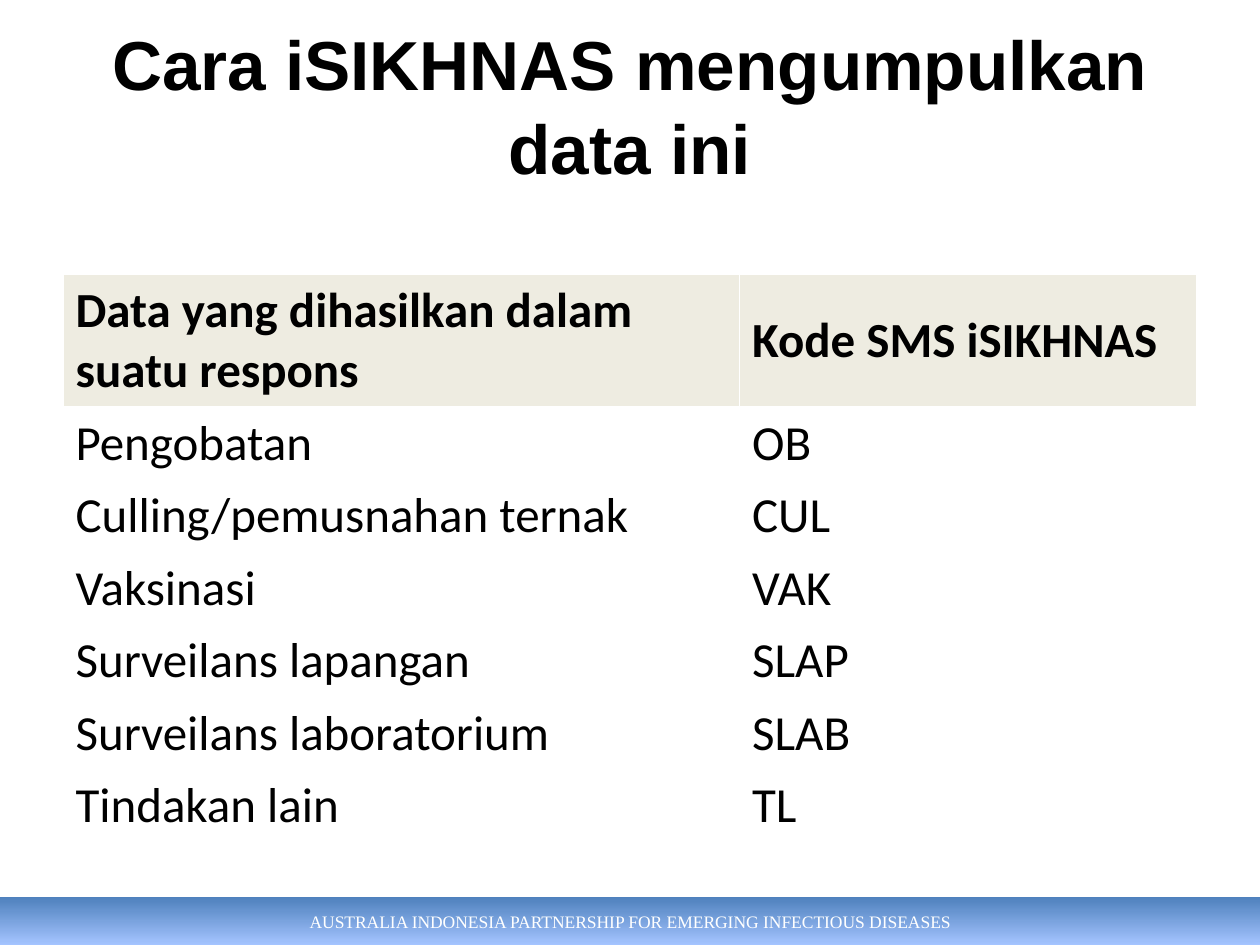
from typing import NamedTuple

from pptx import Presentation
from pptx.dml.color import RGBColor
from pptx.enum.shapes import MSO_SHAPE
from pptx.enum.text import MSO_ANCHOR, MSO_AUTO_SIZE, PP_ALIGN
from pptx.util import Inches, Pt

RECTANGLE = MSO_SHAPE.RECTANGLE
MIDDLE = MSO_ANCHOR.MIDDLE
CENTER = PP_ALIGN.CENTER
NO_AUTOFIT = MSO_AUTO_SIZE.NONE

BLACK = RGBColor(0x00, 0x00, 0x00)
WHITE = RGBColor(0xFF, 0xFF, 0xFF)
HEADER_CREAM = RGBColor(0xEE, 0xEC, 0xE1)
BAND_BLUE = RGBColor(0x4F, 0x81, 0xBD)
BAND_LIGHT = RGBColor(0xA4, 0xC4, 0xFF)

SLIDE_WIDTH, SLIDE_HEIGHT = Inches(10), Inches(7.5)
MARGIN = int(SLIDE_WIDTH * 0.05)
CONTENT_WIDTH = SLIDE_WIDTH - 2 * MARGIN
FOOTER_HEIGHT = Inches(0.38)
COLUMN_WIDTHS = (Inches(5.37), Inches(3.63))
ROW_HEIGHT = Inches(0.49)


class TextStyle(NamedTuple):
    font: str
    size: float
    color: RGBColor = BLACK
    bold: bool = False


class ResponseCode(NamedTuple):
    data: str
    code: str


TITLE_STYLE = TextStyle("Arial", 39.6, bold=True)
HEADER_STYLE = TextStyle("Calibri", 28, bold=True)
BODY_STYLE = TextStyle("Calibri", 28)
FOOTER_STYLE = TextStyle("Times New Roman", 10, WHITE)

HEADER = ResponseCode("Data yang dihasilkan dalam suatu respons", "Kode SMS iSIKHNAS")
RESPONSES = [
    ResponseCode("Pengobatan", "OB"),
    ResponseCode("Culling/pemusnahan ternak", "CUL"),
    ResponseCode("Vaksinasi", "VAK"),
    ResponseCode("Surveilans lapangan", "SLAP"),
    ResponseCode("Surveilans laboratorium", "SLAB"),
    ResponseCode("Tindakan lain", "TL"),
]


def add_run(para, text: str, style: TextStyle) -> None:
    span = para.add_run()
    span.text = text
    span.font.name = style.font
    span.font.size = Pt(style.size)
    span.font.bold = style.bold
    span.font.color.rgb = style.color


def set_title(page, text: str) -> None:
    title = page.shapes.title
    title.left, title.top = MARGIN, Inches(0.52)
    title.width, title.height = CONTENT_WIDTH, Inches(1.25)
    frame = title.text_frame
    frame.auto_size = NO_AUTOFIT
    frame.word_wrap = True
    frame.vertical_anchor = MIDDLE
    frame.margin_bottom = Inches(0.68)
    para = frame.paragraphs[0]
    para.alignment = CENTER
    para.line_spacing = Pt(48)
    add_run(para, text, TITLE_STYLE)


def add_footer(page, text: str) -> None:
    band = page.shapes.add_shape(
        RECTANGLE, 0, SLIDE_HEIGHT - FOOTER_HEIGHT, SLIDE_WIDTH, FOOTER_HEIGHT
    )
    band.shadow.inherit = False
    band.line.fill.background()
    band.fill.gradient()
    band.fill.gradient_angle = 270
    for stop, position, color in zip(
        band.fill.gradient_stops, (0, 1), (BAND_BLUE, BAND_LIGHT)
    ):
        stop.position = position
        stop.color.rgb = color
    band.text_frame.vertical_anchor = MIDDLE
    para = band.text_frame.paragraphs[0]
    para.alignment = CENTER
    add_run(para, text, FOOTER_STYLE)


def add_code_table(page, entries: list[ResponseCode]) -> None:
    holder = page.shapes.add_table(
        len(entries), len(COLUMN_WIDTHS), MARGIN, Inches(2.18),
        CONTENT_WIDTH, ROW_HEIGHT * len(entries),
    )
    table = holder.table
    table.horz_banding = False
    for column, width in zip(table.columns, COLUMN_WIDTHS):
        column.width = width
    for row_index, (row, entry) in enumerate(zip(table.rows, entries)):
        is_header = row_index == 0
        row.height = ROW_HEIGHT
        for cell, text in zip(row.cells, entry):
            cell.vertical_anchor = MIDDLE
            if is_header:
                cell.fill.solid()
                cell.fill.fore_color.rgb = HEADER_CREAM
            else:
                cell.fill.background()
            style = HEADER_STYLE if is_header else BODY_STYLE
            add_run(cell.text_frame.paragraphs[0], text, style)
    table.first_row = False
    holder.height = Inches(4.43)


def main() -> None:
    deck = Presentation()
    deck.slide_width, deck.slide_height = SLIDE_WIDTH, SLIDE_HEIGHT
    page = deck.slides.add_slide(deck.slide_layouts.get_by_name("Title Only"))
    add_footer(page, "AUSTRALIA INDONESIA PARTNERSHIP FOR EMERGING INFECTIOUS DISEASES")
    set_title(page, "Cara iSIKHNAS mengumpulkan data ini")
    add_code_table(page, [HEADER, *RESPONSES])
    deck.save("out.pptx")


if __name__ == "__main__":
    main()
